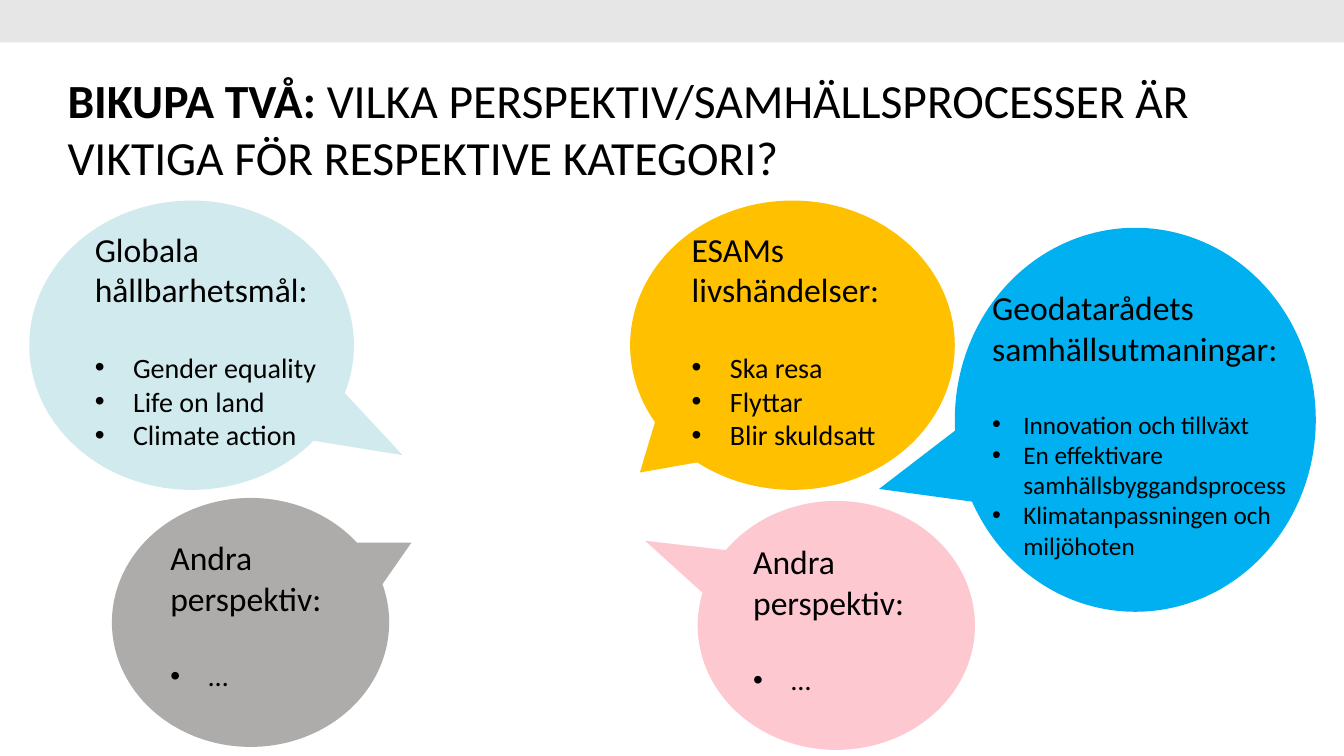
import lxml.etree
import pptx
import pptx.dml.color
import pptx.enum.shapes
import pptx.enum.text
import pptx.oxml.ns
import pptx.util

TITLE = [
    ("BIKUPA TVÅ: ", True),
    ("VILKA PERSPEKTIV/SAMHÄLLSPROCESSER ÄR VIKTIGA FÖR RESPEKTIVE KATEGORI?", False),
]

SMALL, LARGE, WIDE = (275, 247), (322, 287), (358, 381)

# place: left, top; tip: callout adjustments; label: left, top, width
BUBBLES = [
    dict(place=(29, 199), size=LARGE, tip=(0.65, 0.38), fill="aqua",
         label=(94, 227, 237), head="Globala hållbarhetsmål:", level="item",
         items=["Gender equality", "Life on land", "Climate action"]),
    dict(place=(625, 199), size=LARGE, tip=(-0.47, 0.44), fill="gold",
         label=(686, 227, 237), head="ESAMs livshändelser:", level="item",
         items=["Ska resa", "Flyttar", "Blir skuldsatt"]),
    dict(place=(947, 226), size=WIDE, tip=(-0.71, 0.18), fill="blue",
         label=(984, 285, 302), head="Geodatarådets samhällsutmaningar:", level="dense",
         items=["Innovation och tillväxt",
                "En effektivare samhällsbyggandsprocess",
                "Klimatanpassningen och miljöhoten"]),
    dict(place=(111, 494), size=SMALL, tip=(0.58, -0.32), fill="gray",
         label=(169, 533, 237), head="Andra perspektiv:", level="item", items=["…"]),
    dict(place=(692, 497), size=SMALL, tip=(-0.69, -0.34), fill="pink",
         label=(747, 537, 237), head="Andra perspektiv:", level="item", items=["…"]),
]

THEME = dict(
    font="Calibri",
    color=dict(text="000000", band="E7E6E6", aqua="D1EAEE", gold="FFC000",
               blue="00B0F0", gray="AEABAB", pink="FEC8D1"),
    size=dict(title=34, head=24, item=20, dense=18),
    indent=dict(item=38, dense=31),
    gap=29.3,
)

SCALE = 9144  # EMU per px, 100 px to the inch
WIDTH, HEIGHT = 1333, 750
LABEL_H = 115


def px(*values):
    return [pptx.util.Emu(value * SCALE) for value in values]


def color(name):
    return pptx.dml.color.RGBColor.from_string(THEME["color"][name])


def add_form(slide, kind, box, fill):
    form = slide.shapes.add_shape(kind, *px(*box))
    form.shadow.inherit = False
    form.fill.solid()
    form.fill.fore_color.rgb = color(fill)
    form.line.fill.background()
    return form


def add_frame(slide, box):
    """Add a wrapping text box without margins and return its text frame."""
    frame = slide.shapes.add_textbox(*px(*box)).text_frame
    frame.word_wrap = True
    frame.vertical_anchor = pptx.enum.text.MSO_ANCHOR.TOP
    frame.margin_left = frame.margin_right = 0
    frame.margin_top = frame.margin_bottom = 0
    return frame


def add_run(para, text, level, bold=False):
    run = para.add_run()
    run.text = text
    run.font.name = THEME["font"]
    run.font.size = pptx.util.Pt(THEME["size"][level])
    run.font.bold = bold
    run.font.color.rgb = color("text")


def set_bullet(para, level):
    indent = px(THEME["indent"][level])[0]
    props = para._p.get_or_add_pPr()
    props.set("marL", str(indent))
    props.set("indent", str(-indent))
    for tag, key, value in [("a:buFont", "typeface", "Arial"), ("a:buChar", "char", "•")]:
        lxml.etree.SubElement(props, pptx.oxml.ns.qn(tag)).set(key, value)


def add_bubble(slide, place, size, tip, fill, label, head, level, items):
    kind = pptx.enum.shapes.MSO_SHAPE.OVAL_CALLOUT
    form = add_form(slide, kind, place + size, fill)
    for index, value in enumerate(tip):
        form.adjustments[index] = value
    frame = add_frame(slide, label + (LABEL_H,))
    add_run(frame.paragraphs[0], head, "head")
    for index, item in enumerate(items):
        para = frame.add_paragraph()
        set_bullet(para, level)
        if index == 0:
            para.space_before = pptx.util.Pt(THEME["gap"])
        add_run(para, item, level)


def main():
    deck = pptx.Presentation()
    deck.slide_width, deck.slide_height = px(WIDTH, HEIGHT)
    slide = deck.slides.add_slide(deck.slide_layouts[6])
    add_form(slide, pptx.enum.shapes.MSO_SHAPE.RECTANGLE, (0, 0, WIDTH, 42), "band")
    title = add_frame(slide, (67, 70, 1238, 60)).paragraphs[0]
    for text, bold in TITLE:
        add_run(title, text, "title", bold)
    for bubble in BUBBLES:
        add_bubble(slide, **bubble)
    deck.save("out.pptx")


if __name__ == "__main__":
    main()
